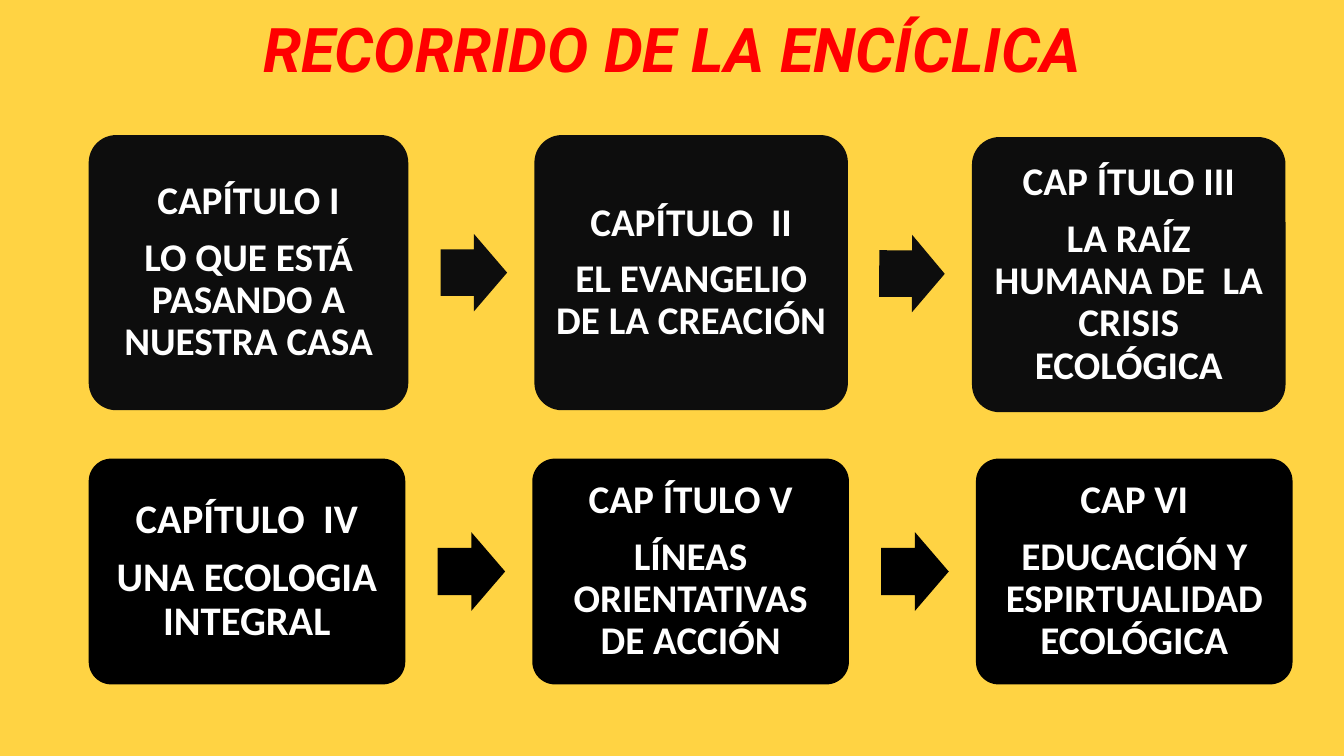
from pptx import Presentation
from pptx import util as u
from pptx.dml.color import RGBColor
from pptx.enum import shapes, text

TITLE = "RECORRIDO DE LA ENCÍCLICA"
COLORS = {"back": "FFD343", "title": "FF0000", "text": "FFFFFF",
          "upper": "0D0D0D", "lower": "000000"}

# Boxes: left, top, width, text size, heading, theme
# Arrows: left, top, width, rotation
ROWS = [
    {"fill": "upper", "height": 2.73, "arrow_height": 0.77,
     "boxes": [
         (0.88, 1.34, 3.17, 28, "CAPÍTULO I", "LO QUE ESTÁ PASANDO A NUESTRA CASA"),
         (5.3, 1.34, 3.11, 28, "CAPÍTULO  II", "EL EVANGELIO DE LA CREACIÓN"),
         (9.64, 1.36, 3.11, 28, "CAP ÍTULO III", "LA RAÍZ HUMANA DE  LA CRISIS ECOLÓGICA"),
     ],
     "arrows": [(4.37, 2.32, 0.66, 0), (8.72, 2.33, 0.65, 0.3)]},
    {"fill": "lower", "height": 2.24, "arrow_height": 0.78,
     "boxes": [
         (0.88, 4.55, 3.14, 29, "CAPÍTULO  IV", "UNA ECOLOGIA INTEGRAL"),
         (5.28, 4.55, 3.14, 28, "CAP ÍTULO V", "LÍNEAS ORIENTATIVAS DE ACCIÓN"),
         (9.68, 4.55, 3.14, 28, "CAP VI", "EDUCACIÓN Y ESPIRTUALIDAD ECOLÓGICA"),
     ],
     "arrows": [(4.34, 5.28, 0.67, 0), (8.74, 5.28, 0.67, 0)]},
]


def color(name):
    return RGBColor.from_string(COLORS[name])


def style(para, font, size, tint):
    para.alignment = text.PP_ALIGN.CENTER
    para.line_spacing = 0.9
    for run in para.runs:
        run.font.name = font
        run.font.size = u.Pt(size)
        run.font.bold = True
        run.font.color.rgb = color(tint)


def add_shape(slide, kind, place, fill, adjust):
    shape = slide.shapes.add_shape(kind, *map(u.Inches, place))
    for i, value in enumerate(adjust):
        shape.adjustments[i] = value
    shape.fill.solid()
    shape.fill.fore_color.rgb = color(fill)
    shape.line.fill.background()
    shape.shadow.inherit = False
    return shape


def add_box(slide, row, box):
    left, top, width, size, heading, theme = box
    shape = add_shape(slide, shapes.MSO_SHAPE.ROUNDED_RECTANGLE,
                      (left, top, width, row["height"]), row["fill"], [0.1])
    frame = shape.text_frame
    frame.word_wrap = True
    frame.vertical_anchor = text.MSO_ANCHOR.MIDDLE
    frame.margin_left = frame.margin_right = u.Inches(0.12)
    frame.margin_top = frame.margin_bottom = u.Inches(0.12)
    frame.text = heading + "\n" + theme
    for para in frame.paragraphs:
        style(para, "Calibri", size, "text")
    frame.paragraphs[0].space_after = u.Pt(10)


def main():
    prs = Presentation()
    prs.slide_width, prs.slide_height = u.Inches(13.33), u.Inches(7.5)
    slide = prs.slides.add_slide(prs.slide_layouts[5])
    slide.background.fill.solid()
    slide.background.fill.fore_color.rgb = color("back")

    # Title
    title = slide.shapes.title
    title.left, title.top = u.Inches(0.92), u.Inches(0.11)
    title.width, title.height = u.Inches(11.5), u.Inches(0.83)
    frame = title.text_frame
    frame.text = TITLE
    frame.auto_size = text.MSO_AUTO_SIZE.NONE
    frame.vertical_anchor = text.MSO_ANCHOR.MIDDLE
    style(frame.paragraphs[0], "Roboto", 44, "title")
    frame.paragraphs[0].runs[0].font.italic = True

    # Chapters and the arrows between them
    for row in ROWS:
        for box in row["boxes"]:
            add_box(slide, row, box)
        for left, top, width, turn in row["arrows"]:
            arrow = add_shape(slide, shapes.MSO_SHAPE.RIGHT_ARROW,
                              (left, top, width, row["arrow_height"]),
                              row["fill"], [0.6, 0.5])
            arrow.rotation = turn

    prs.save("out.pptx")


if __name__ == "__main__":
    main()
